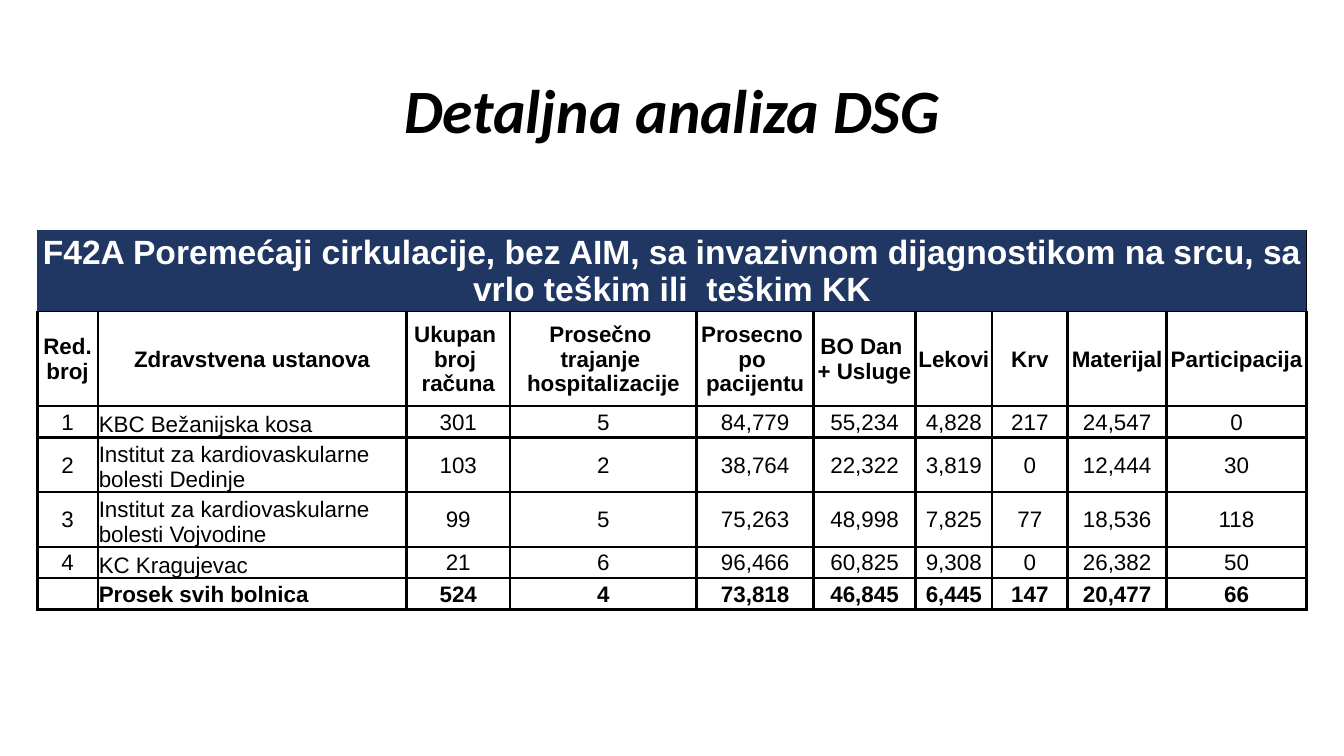
from lxml import etree
from pptx import Presentation
from pptx import util as u
from pptx.dml import color
from pptx.enum import text
from pptx.oxml import ns

HUES = {"ink": "000000", "navy": "203764", "white": "FFFFFF"}
COLS = [0.6, 3.06, 1.03, 1.85, 1.16, 1.01, 0.76, 0.75, 0.98, 1.39]
ROWS = [0.43, 0.94] + [0.31] * 5
BAND = ("F42A Poremećaji cirkulacije, bez AIM, sa invazivnom dijagnostikom "
        "na srcu, sa vrlo teškim ili  teškim KK")
HEADS = ["Red. broj", "Zdravstvena ustanova", "Ukupan \nbroj \nračuna",
         "Prosečno \ntrajanje \nhospitalizacije", "Prosecno \npo \npacijentu",
         "BO Dan \n+ Usluge", "Lekovi ", "Krv", "Materijal", "Participacija"]
DATA = [
    ["1", "KBC Bežanijska kosa", "301", "5", "84,779", "55,234", "4,828", "217", "24,547", "0"],
    ["2", "Institut za kardiovaskularne bolesti Dedinje", "103", "2", "38,764", "22,322",
     "3,819", "0", "12,444", "30"],
    ["3", "Institut za kardiovaskularne bolesti Vojvodine", "99", "5", "75,263", "48,998",
     "7,825", "77", "18,536", "118"],
    ["4", "KC Kragujevac", "21", "6", "96,466", "60,825", "9,308", "0", "26,382", "50"],
    ["", "Prosek svih bolnica", "524", "4", "73,818", "46,845", "6,445", "147", "20,477", "66"],
]


def rgb(name):
    return color.RGBColor.from_string(HUES[name])


def style(frame, face, size, hue, bold, ital=False, align=text.PP_ALIGN.CENTER):
    for para in frame.paragraphs:
        para.alignment = align
        for run in para.runs:
            font = run.font
            font.name, font.size = face, u.Pt(size)
            font.bold, font.italic = bold, ital
            font.color.rgb = rgb(hue)


def edge(cell, sides):
    props = cell._tc.get_or_add_tcPr()
    for side, width in sides.items():
        line = etree.SubElement(props, ns.qn("a:ln" + side), w=str(u.Pt(width)))
        if width:
            fill = etree.SubElement(line, ns.qn("a:solidFill"))
            etree.SubElement(fill, ns.qn("a:srgbClr"), val=HUES["ink"])
        else:
            etree.SubElement(line, ns.qn("a:noFill"))


def fill_cell(cell, words, size=16, hue="ink", bold=False, back=None,
              align=text.PP_ALIGN.CENTER, anchor=text.MSO_ANCHOR.MIDDLE):
    cell.text_frame.text = words
    style(cell.text_frame, "Arial", size, hue, bold, align=align)
    cell.vertical_anchor = anchor
    cell.margin_left = cell.margin_right = cell.margin_top = u.Inches(0.01)
    cell.margin_bottom = 0
    if back:
        cell.fill.solid()
        cell.fill.fore_color.rgb = rgb(back)
    else:
        cell.fill.background()


def add_title(slide, left, top, width, height):
    box = slide.shapes.add_textbox(*map(u.Inches, (left, top, width, height)))
    frame = box.text_frame
    frame.word_wrap = True
    frame.vertical_anchor = text.MSO_ANCHOR.MIDDLE
    frame.text = "Detaljna analiza DSG"
    frame.paragraphs[0].line_spacing = 0.9
    style(frame, "Calibri", 44, "ink", True, True)


def add_costs(slide, left, top, height):
    size = (left, top, sum(COLS), height)
    holder = slide.shapes.add_table(len(ROWS), len(COLS), *map(u.Inches, size))
    grid = holder.table
    grid.first_row = grid.horz_banding = False
    for col, wide in zip(grid.columns, COLS):
        col.width = u.Inches(wide)
    for row, tall in zip(grid.rows, ROWS):
        row.height = u.Inches(tall)
    holder.height = u.Inches(height)
    for cell in grid.rows[0].cells:
        edge(cell, {"L": 0, "R": 0.5, "T": 0, "B": 0.5})
    band = grid.cell(0, 0)
    band.merge(grid.cell(0, len(COLS) - 1))
    fill_cell(band, BAND, 24, "white", True, "navy")
    last = len(ROWS) - 1
    for r, line in enumerate([HEADS] + DATA, 1):
        for c, words in enumerate(line):
            cell = grid.cell(r, c)
            edge(cell, {"L": 2, "R": 2, "T": 0.5 if r == 1 else 2, "B": 2})
            name = c == 1 and r > 1
            low = name and r < last
            fill_cell(cell, words, bold=r in (1, last),
                      align=text.PP_ALIGN.LEFT if name else text.PP_ALIGN.CENTER,
                      anchor=text.MSO_ANCHOR.BOTTOM if low else text.MSO_ANCHOR.MIDDLE)


def main():
    deck = Presentation()
    deck.slide_width, deck.slide_height = u.Inches(13.33), u.Inches(7.5)
    slide = deck.slides.add_slide(deck.slide_layouts[6])
    add_title(slide, 0.92, 0.4, 11.5, 1.45)
    add_costs(slide, 0.37, 2.28, 3.77)
    deck.save("out.pptx")


if __name__ == "__main__":
    main()
